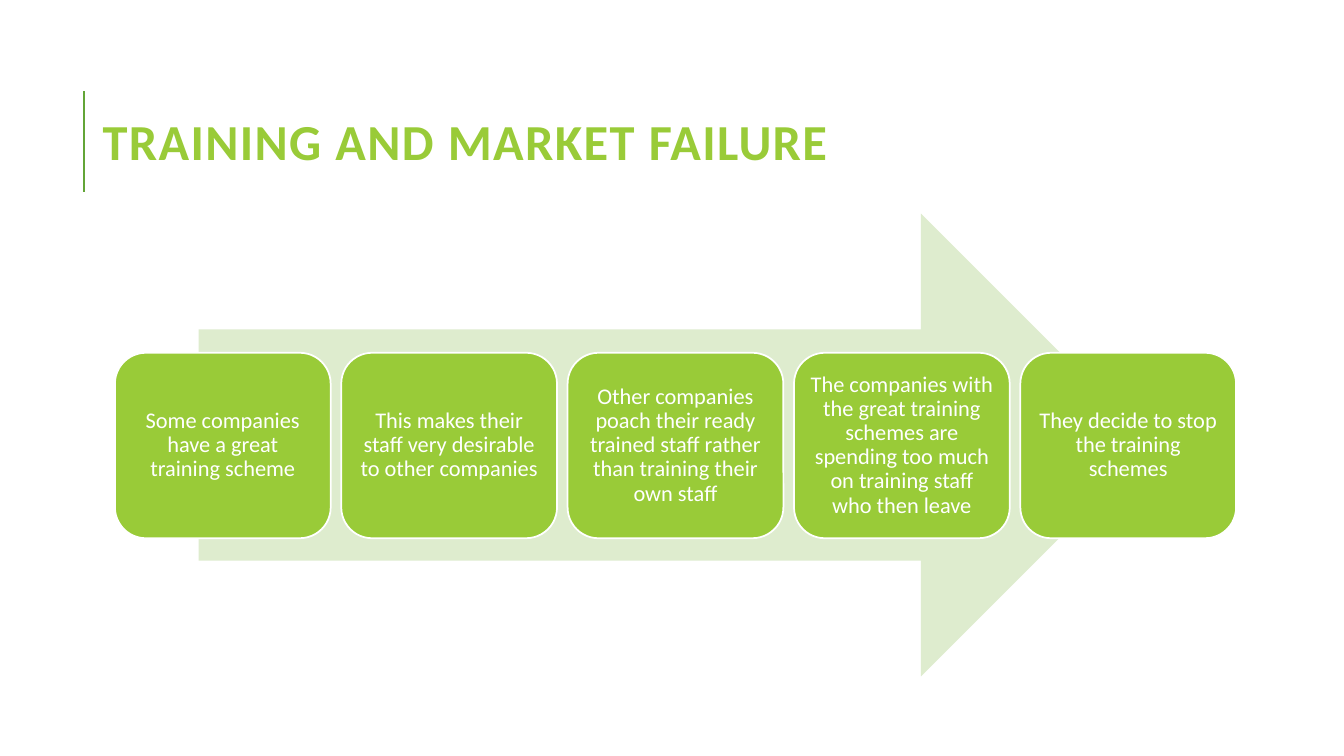
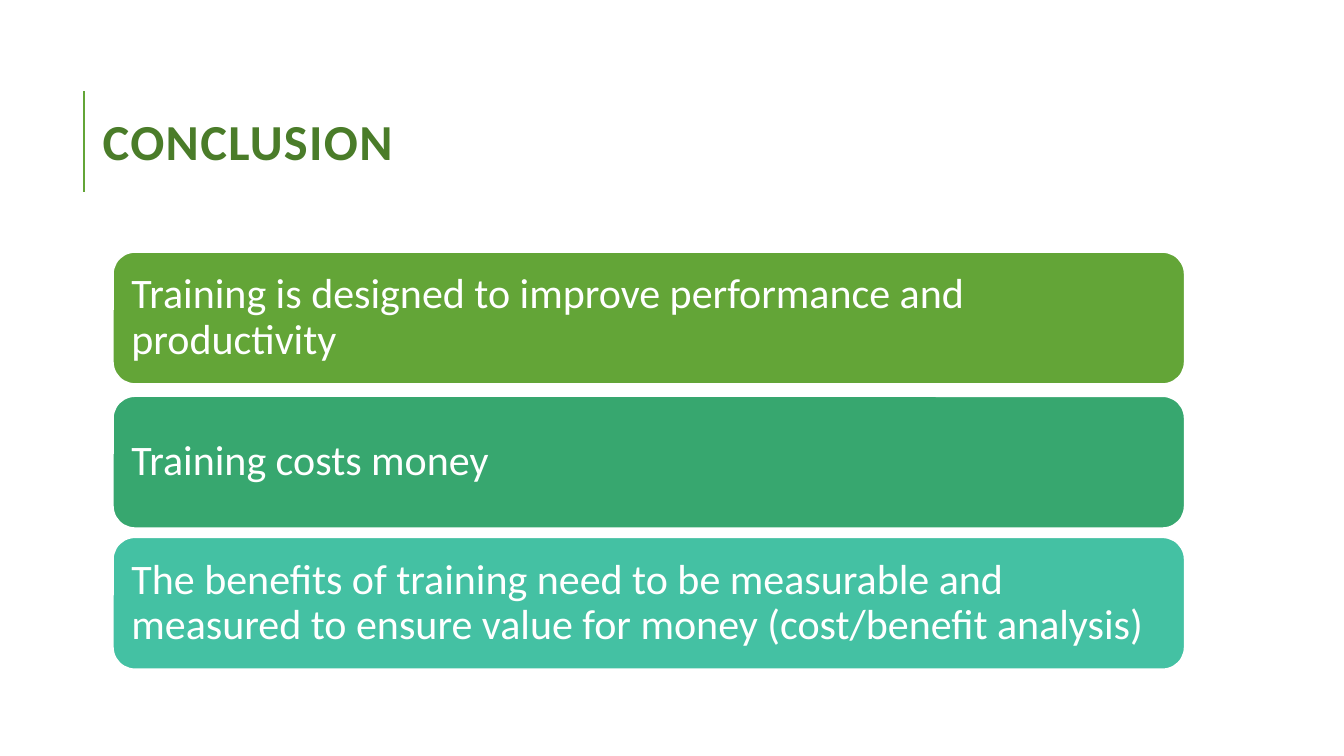
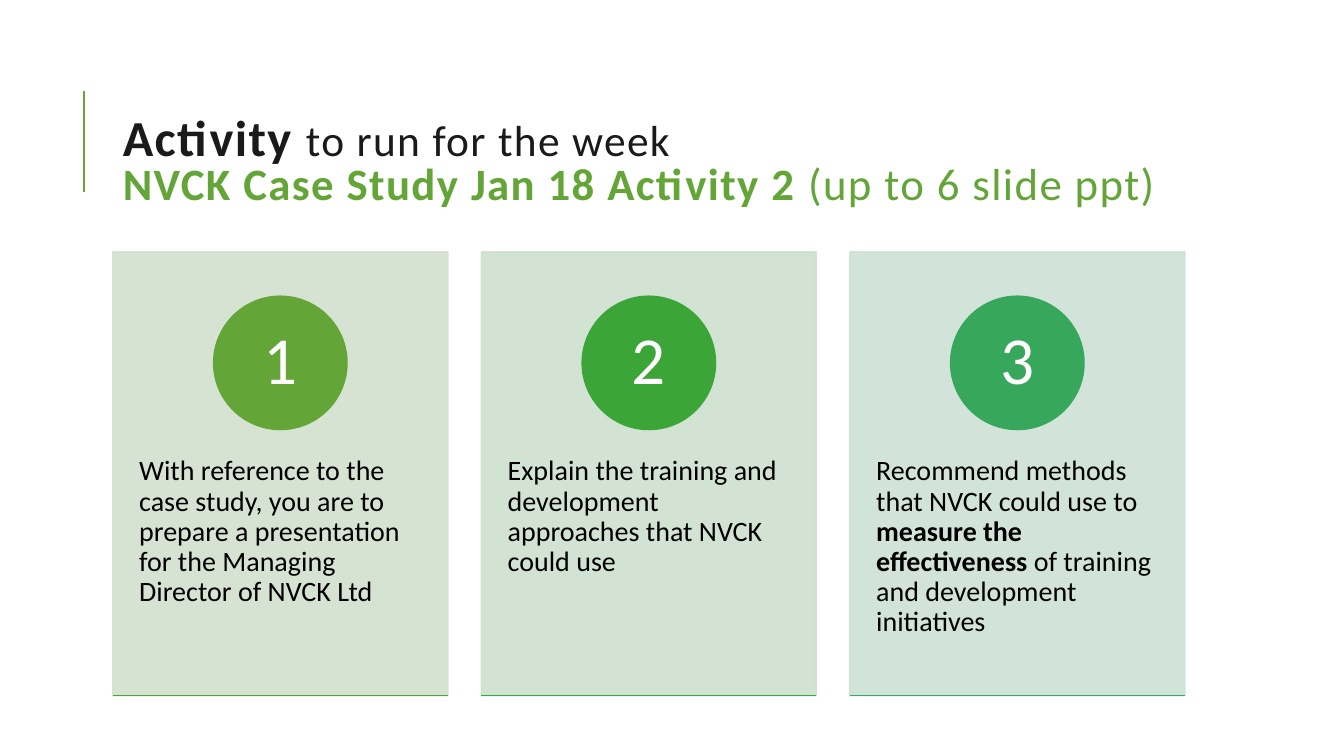
import pptx
import pptx.util
import pptx.dml.color
import pptx.enum.shapes
import pptx.enum.text
import pptx.oxml
import pptx.oxml.ns
import lxml.etree

Inches = pptx.util.Inches
RGBColor = pptx.dml.color.RGBColor
MSO_SHAPE = pptx.enum.shapes.MSO_SHAPE
PP_ALIGN = pptx.enum.text.PP_ALIGN
MSO_ANCHOR = pptx.enum.text.MSO_ANCHOR
qn = pptx.oxml.ns.qn

FONT = "Calibri"
WHITE = RGBColor(0xFF, 0xFF, 0xFF)
BLACK = RGBColor(0x00, 0x00, 0x00)
INK = RGBColor(0x1A, 0x1A, 0x1A)
GREEN = RGBColor(0x63, 0xA5, 0x37)
DARK_GREEN = RGBColor(0x4A, 0x7C, 0x29)
LIME = RGBColor(0x99, 0xCB, 0x38)
PALE_LIME = RGBColor(0xDE, 0xEC, 0xCE)
SEA_GREEN = RGBColor(0x37, 0xA7, 0x6F)
TURQUOISE = RGBColor(0x44, 0xC1, 0xA3)
LEAF = RGBColor(0x4F, 0xA5, 0x37)
EMERALD = RGBColor(0x3B, 0xA6, 0x37)
FERN = RGBColor(0x37, 0xA6, 0x47)
JADE = RGBColor(0x37, 0xA7, 0x5B)
PALE_GREEN = RGBColor(0xD3, 0xE1, 0xCE)
PALE_MINT = RGBColor(0xCE, 0xE1, 0xCF)
PALE_JADE = RGBColor(0xCE, 0xE1, 0xD5)

CONTENT_LEFT = 1.12
CONTENT_TOP = 2.5
CONTENT_WIDTH = 10.63
LINE_WIDTH = 1.25


def write_text(shape, spans, align=PP_ALIGN.LEFT, anchor=MSO_ANCHOR.MIDDLE,
               insets=(0.1, 0.05, 0.1, 0.05), spacing=0.9):
    frame = shape.text_frame
    frame.word_wrap = True
    frame.vertical_anchor = anchor
    (frame.margin_left, frame.margin_top,
     frame.margin_right, frame.margin_bottom) = map(Inches, insets)
    para = frame.paragraphs[0]
    para.alignment = align
    para.line_spacing = spacing
    for text, size, color, bold in spans:
        if text == "\n":
            para.add_line_break()
            continue
        span = para.add_run()
        span.text = text
        span.font.name = FONT
        span.font.size = pptx.util.Pt(size)
        span.font.color.rgb = color
        span.font.bold = bold


def add_panel(page, kind, left, top, width, height, fill, line=None):
    panel = page.shapes.add_shape(
        kind, Inches(left), Inches(top), Inches(width), Inches(height))
    panel.shadow.inherit = False
    panel.fill.solid()
    panel.fill.fore_color.rgb = fill
    if line is None:
        panel.line.fill.background()
    else:
        panel.line.color.rgb = line
        panel.line.width = pptx.util.Pt(LINE_WIDTH)
    return panel


def add_rule(page, x1, y1, x2, y2, color, width):
    rule = page.shapes.add_connector(
        pptx.enum.shapes.MSO_CONNECTOR.STRAIGHT,
        Inches(x1), Inches(y1), Inches(x2), Inches(y2))
    rule.line.color.rgb = color
    rule.line.width = pptx.util.Pt(width)
    lxml.etree.SubElement(rule.element.spPr, qn("a:effectLst"))


def set_opacity(shape, percent):
    for color in shape.element.spPr.iter(qn("a:srgbClr")):
        alpha = lxml.etree.SubElement(color, qn("a:alpha"))
        alpha.set("val", str(percent * 1000))


def add_page(deck, title_spans, left=0.92, top=0.63, height=1.64):
    page = deck.slides.add_slide(deck.slide_layouts[6])
    add_rule(page, 0.83, 1.9, 0.83, 0.9, GREEN, 1.5)
    box = page.shapes.add_textbox(
        Inches(left), Inches(top), Inches(CONTENT_WIDTH), Inches(height))
    write_text(box, title_spans, spacing=0.8)
    for properties in box.element.iter(qn("a:rPr")):
        properties.set("spc", "100")
    return page


def add_step(page, index, text):
    step = add_panel(page, MSO_SHAPE.ROUNDED_RECTANGLE,
                     1.14 + index * 2.245, 3.5, 2.14, 1.84, LIME, WHITE)
    write_text(step, [(text, 16, WHITE, False)], PP_ALIGN.CENTER,
               insets=(0.07,) * 4)


def add_bar(page, top, fill, text):
    bar = add_panel(page, MSO_SHAPE.ROUNDED_RECTANGLE,
                    CONTENT_LEFT, top, CONTENT_WIDTH, 1.31, fill, WHITE)
    write_text(bar, [(text, 30, WHITE, False)], insets=(0.12,) * 4)


def add_task(page, index, fill, accent, base, spans):
    width, height, diameter = 3.32, 4.4, 1.32
    left = CONTENT_LEFT + index * (CONTENT_WIDTH - width) / 2
    bottom = CONTENT_TOP + height
    card = add_panel(page, MSO_SHAPE.RECTANGLE,
                     left, CONTENT_TOP, width, height, fill, fill)
    set_opacity(card, 90)
    write_text(card, [(text, 20, BLACK, bold) for text, bold in spans],
               anchor=MSO_ANCHOR.TOP, insets=(0.26, 2.03, 0.26, 0.36))
    badge = add_panel(page, MSO_SHAPE.OVAL, left + (width - diameter) / 2,
                      2.94, diameter, diameter, accent, accent)
    write_text(badge, [(str(index + 1), 48, WHITE, False)], PP_ALIGN.CENTER,
               insets=(0.1, 0.01, 0.1, 0.01))
    add_rule(page, left, bottom, left + width, bottom, base, LINE_WIDTH)


def build_market_failure(deck):
    page = add_page(deck, [("TRAINING AND MARKET FAILURE", 36, LIME, True)])
    add_panel(page, MSO_SHAPE.RIGHT_ARROW, 1.97, 2.12, 9.46, 4.59, PALE_LIME)
    steps = [
        "Some companies have a great training scheme",
        "This makes their staff very desirable to other companies",
        "Other companies poach their ready trained staff rather than "
        "training their own staff",
        "The companies with the great training schemes are spending too much "
        "on training staff who then leave",
        "They decide to stop the training schemes",
    ]
    for index, text in enumerate(steps):
        add_step(page, index, text)


def build_conclusion(deck):
    page = add_page(deck, [("CONCLUSION", 36, DARK_GREEN, True)])
    bars = [
        (CONTENT_TOP, GREEN,
         "Training is designed to improve performance and productivity"),
        (3.93, SEA_GREEN, "Training costs money"),
        (5.33, TURQUOISE,
         "The benefits of training need to be measurable and measured to "
         "ensure value for money (cost/benefit analysis)"),
    ]
    for top, fill, text in bars:
        add_bar(page, top, fill, text)


def build_activity(deck):
    page = add_page(deck, [
        ("Activity ", 36, INK, True),
        ("to run for the week", 31, INK, False),
        ("\n", 31, INK, False),
        ("NVCK Case Study Jan 18 Activity 2 ", 32, GREEN, True),
        ("(up to 6 slide ppt)", 32, GREEN, False),
    ], left=CONTENT_LEFT, top=0.95, height=1.35)
    tasks = [
        (PALE_GREEN, GREEN, LEAF, [
            ("With reference to the case study, you are to prepare a "
             "presentation for the Managing Director of NVCK Ltd", False)]),
        (PALE_MINT, EMERALD, FERN, [
            ("Explain the training and development approaches that NVCK "
             "could use", False)]),
        (PALE_JADE, JADE, SEA_GREEN, [
            ("Recommend methods that NVCK could use to ", False),
            ("measure the effectiveness ", True),
            ("of training and development initiatives", False)]),
    ]
    for index, task in enumerate(tasks):
        add_task(page, index, *task)


def main():
    deck = pptx.Presentation()
    deck.slide_width = Inches(13.33)
    deck.slide_height = Inches(7.5)
    build_market_failure(deck)
    build_conclusion(deck)
    build_activity(deck)
    deck.save("out.pptx")


if __name__ == "__main__":
    main()
